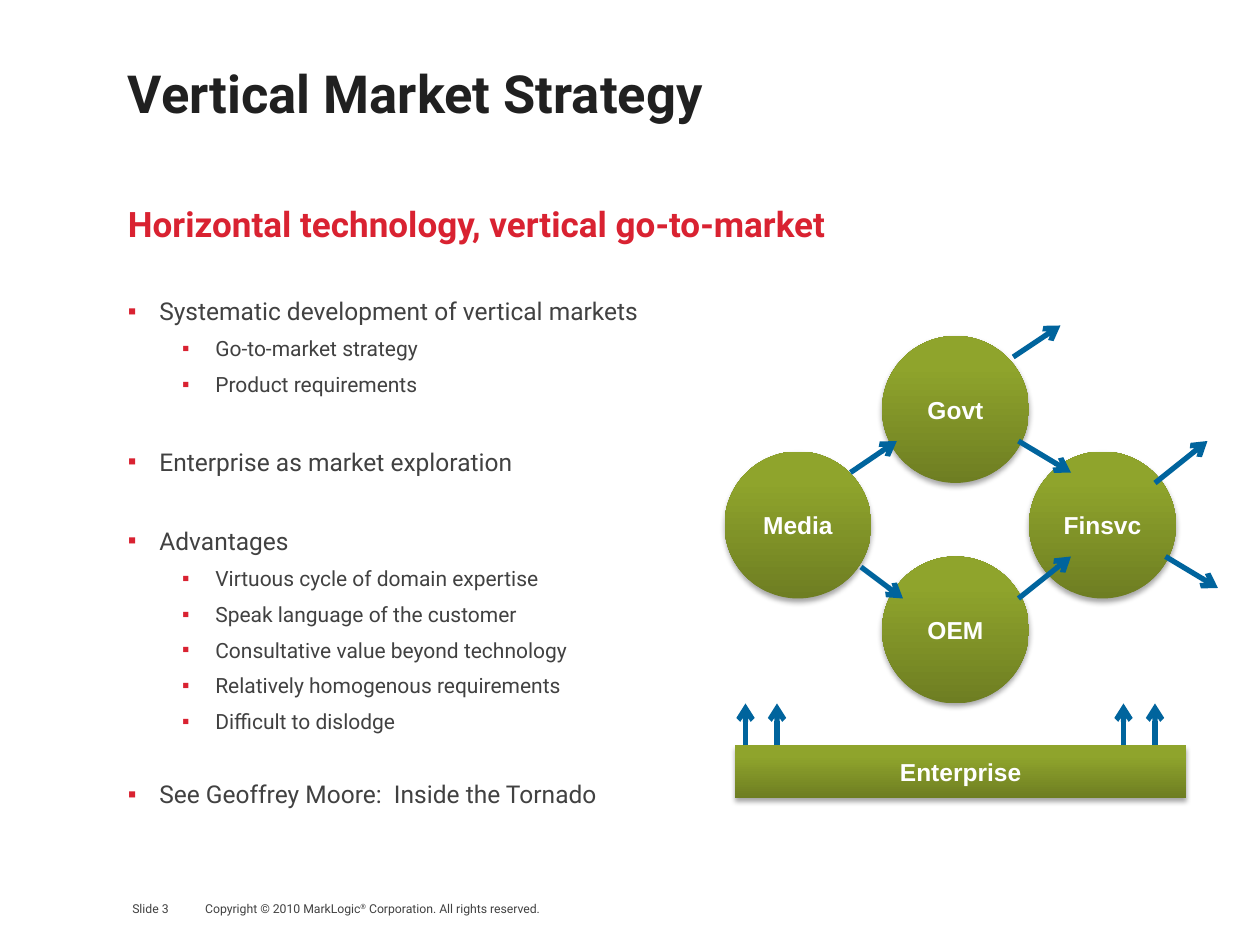
from typing import NamedTuple

from lxml.etree import SubElement
from pptx import Presentation
from pptx.dml.color import RGBColor
from pptx.enum.shapes import MSO_CONNECTOR as Connector, MSO_SHAPE as Shape
from pptx.enum.text import MSO_ANCHOR as Anchor, PP_ALIGN as Align
from pptx.oxml.ns import qn
from pptx.util import Pt

COLORS = {"dark": "202020", "text": "414141", "red": "D92231", "white": "FFFFFF",
          "arrow": "00649D", "shadow": "000000"}
GREEN_STOPS = {0: "6E7E22", 80000: "8FA42C", 100000: "91A72A"}
FORMATS = {
    "title": {"size": Pt(30), "name": "Roboto", "bold": True},
    "subtitle": {"size": Pt(20), "name": "Roboto", "bold": True},
    "footer": {"size": Pt(7), "name": "Roboto"},
    "main": {"size": Pt(14), "name": "Roboto"},
    "sub": {"size": Pt(12), "name": "Roboto"},
    "label": {"size": Pt(14), "name": "Arial", "bold": True},
}
INDENTS = {"main": (18, -18), "sub": (50, -19)}
DIAMETER = 84


class Label(NamedTuple):
    text: str
    left: float
    top: float
    width: float
    height: float
    style: str
    color: str
    inset: bool = True
    anchor: Anchor = Anchor.TOP
    wrap: bool = True


class Bullet(NamedTuple):
    text: str
    style: str = "sub"
    before: float = 6


class Node(NamedTuple):
    text: str
    left: float
    top: float
    width: float = DIAMETER
    height: float = DIAMETER
    kind: Shape = Shape.OVAL


class Arrow(NamedTuple):
    x1: float
    y1: float
    x2: float
    y2: float


LABELS = [
    Label("Slide 3", 75.6, 514.8, 46.8, 8.6, "footer", "text", inset=False),
    Label("Vertical Market Strategy", 66, 21.6, 513, 62.6, "title", "dark", anchor=Anchor.MIDDLE),
    Label("Horizontal technology, vertical go-to-market", 66, 112.3, 467, 31.7,
          "subtitle", "red", wrap=False),
]
COPYRIGHT = Label("Copyright © 2010 MarkLogic", 110.2, 511.2, 360, 15.8, "footer", "text")
BODY = Label("", 66, 165.6, 318, 326, "main", "text")
BULLETS = [
    Bullet("Systematic development of vertical markets", "main", 0),
    Bullet("Go-to-market strategy"),
    Bullet("Product requirements"),
    Bullet("Enterprise as market exploration", "main", 28.4),
    Bullet("Advantages", "main", 28.4),
    Bullet("Virtuous cycle of domain expertise"),
    Bullet("Speak language of the customer"),
    Bullet("Consultative value beyond technology"),
    Bullet("Relatively homogenous requirements"),
    Bullet("Difficult to dislodge"),
    Bullet("See Geoffrey Moore:  Inside the Tornado", "main", 26),
]
NODES = [
    Node("Media", 414, 258),
    Node("Govt", 504, 192),
    Node("Finsvc", 588, 258),
    Node("OEM", 504, 318),
    Node("Enterprise", 420, 426, 258, 30, Shape.RECTANGLE),
]
ARROWS = [
    Arrow(486, 270, 512.5, 252), Arrow(492, 324, 516, 342),
    Arrow(582, 252, 612, 270), Arrow(582, 342, 612, 318),
    Arrow(579, 204, 606, 186), Arrow(666, 318, 696, 336), Arrow(660, 276, 690, 252),
    *(Arrow(x, 426, x, 402) for x in (426, 444, 642, 660)),
]


def rgb(name: str) -> RGBColor:
    """Look up a palette colour."""
    return RGBColor.from_string(COLORS[name])


def set_font(font, style: str, color: str) -> None:
    """Apply a named format and colour to a font."""
    for key, value in FORMATS[style].items():
        setattr(font, key, value)
    font.color.rgb = rgb(color)


def add_label(page, label: Label):
    """Add a text box and return its first paragraph."""
    box = page.shapes.add_textbox(*map(Pt, label[1:5]))
    frame = box.text_frame
    frame.word_wrap = label.wrap
    frame.vertical_anchor = label.anchor
    if not label.inset:
        for side in ("left", "right", "top", "bottom"):
            setattr(frame, f"margin_{side}", 0)
    para = frame.paragraphs[0]
    if label.text:
        add_span(para, label.text, label.style, label.color)
    return para


def add_span(para, text: str, style: str, color: str):
    """Add formatted text to a paragraph."""
    span = para.add_run()
    span.text = text
    set_font(span.font, style, color)
    return span


def add_copyright(page) -> None:
    """Add the copyright line with its raised mark."""
    para = add_label(page, COPYRIGHT)
    mark = add_span(para, "®", COPYRIGHT.style, COPYRIGHT.color)
    mark.font._element.set("baseline", "30000")
    add_span(para, " Corporation. All rights reserved.", COPYRIGHT.style, COPYRIGHT.color)


def add_bullets(page) -> None:
    """Add the two-level bullet list."""
    first = add_label(page, BODY)
    frame = first._parent
    for index, bullet in enumerate(BULLETS):
        para = frame.add_paragraph() if index else first
        para.level = int(bullet.style == "sub")
        para.space_before = Pt(bullet.before)
        props = para._p.get_or_add_pPr()
        for key, value in zip(("marL", "indent"), INDENTS[bullet.style]):
            props.set(key, str(Pt(value)))
        SubElement(SubElement(props, qn("a:buClr")), qn("a:srgbClr"), val=COLORS["red"])
        SubElement(props, qn("a:buFont"), typeface="Arial")
        SubElement(props, qn("a:buChar"), char="▪")
        add_span(para, bullet.text, bullet.style, "text")


def add_node(page, node: Node) -> None:
    """Add a green gradient shape with a soft shadow and a centred label."""
    shape = page.shapes.add_shape(node.kind, *map(Pt, node[1:5]))
    shape.line.fill.background()
    shape.fill.gradient()
    shape.fill.gradient_angle = 90
    shape.shadow.inherit = False
    props = shape._element.spPr
    stops = props.find(".//" + qn("a:gsLst"))
    for stop in list(stops):
        stops.remove(stop)
    for position, color in GREEN_STOPS.items():
        stop = SubElement(stops, qn("a:gs"), pos=str(position))
        SubElement(stop, qn("a:srgbClr"), val=color)
    shadow = SubElement(props.find(qn("a:effectLst")), qn("a:outerShdw"),
                        blurRad=str(Pt(3.1)), dist=str(Pt(1.8)), dir="5400000", rotWithShape="0")
    tint = SubElement(shadow, qn("a:srgbClr"), val=COLORS["shadow"])
    SubElement(tint, qn("a:alpha"), val="35000")
    frame = shape.text_frame
    frame.vertical_anchor = Anchor.MIDDLE
    para = frame.paragraphs[0]
    para.alignment = Align.CENTER
    add_span(para, node.text, "label", "white")


def add_arrow(page, arrow: Arrow) -> None:
    """Add a straight blue line with an open arrowhead."""
    line = page.shapes.add_connector(Connector.STRAIGHT, *map(Pt, arrow))
    line.line.color.rgb = rgb("arrow")
    line.line.width = Pt(3)
    SubElement(line.line._get_or_add_ln(), qn("a:tailEnd"), type="arrow")
    SubElement(line._element.spPr, qn("a:effectLst"))


def main() -> None:
    """Build and save the deck."""
    deck = Presentation()
    deck.slide_width, deck.slide_height = Pt(720), Pt(540)
    page = deck.slides.add_slide(deck.slide_layouts[6])
    for label in LABELS:
        add_label(page, label)
    add_copyright(page)
    add_bullets(page)
    for node in NODES:
        add_node(page, node)
    for arrow in ARROWS:
        add_arrow(page, arrow)
    deck.save("out.pptx")


if __name__ == "__main__":
    main()
